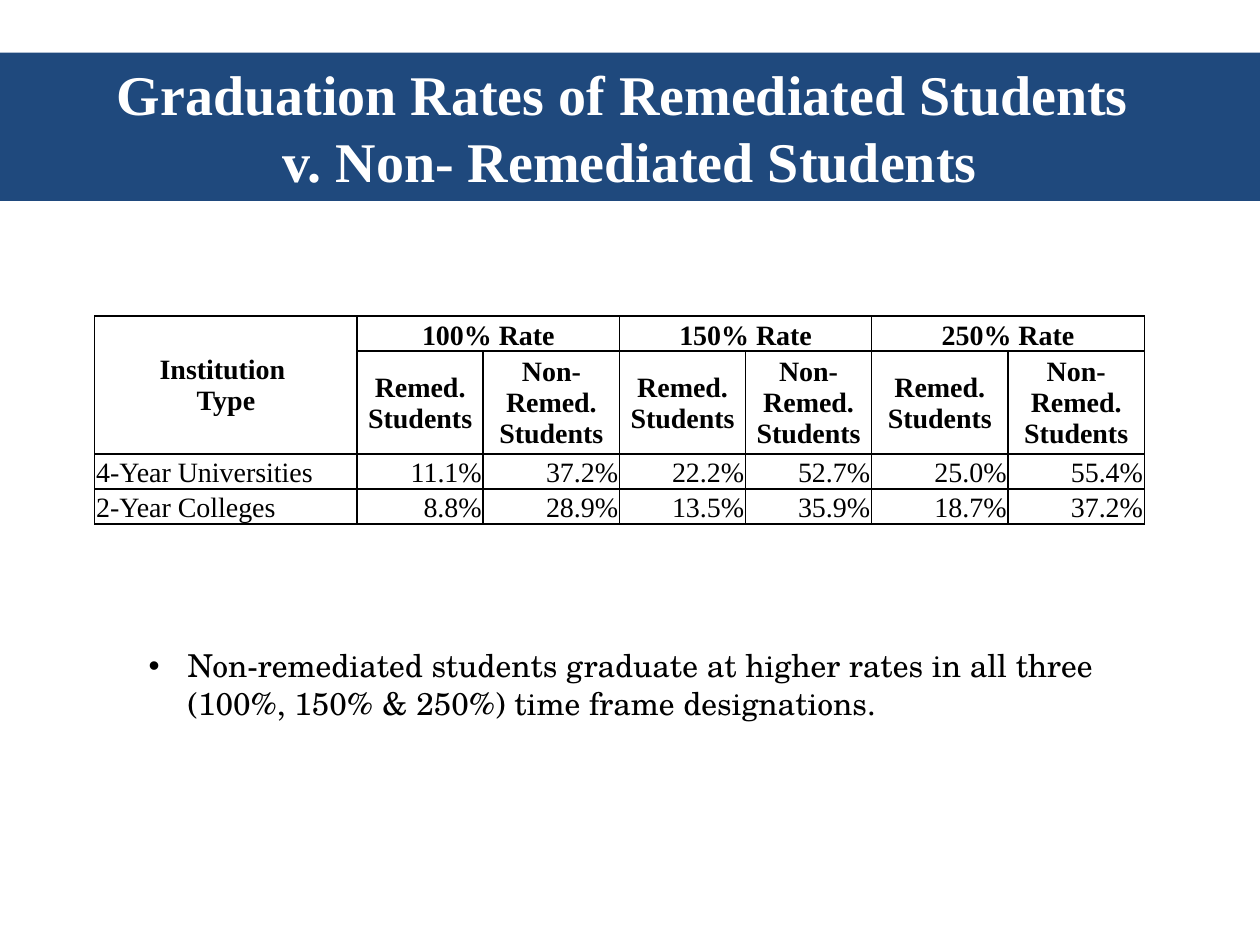
from lxml import etree
from pptx import Presentation
from pptx import util as u
from pptx.dml.color import RGBColor
from pptx.enum import text
from pptx.oxml import ns

COLORS = {"band": "1F497D", "title": "FFFFFF", "ink": "000000"}
SERIF, SCHOLA = "Times New Roman", "TeX Gyre Schola"

RATES = ["100% Rate", "150% Rate", "250% Rate"]
GROUPS = ["Remed. Students", "Non-Remed. Students"]
RESULTS = [
    ["4-Year Universities", "11.1%", "37.2%", "22.2%", "52.7%", "25.0%", "55.4%"],
    ["2-Year Colleges", "8.8%", "28.9%", "13.5%", "35.9%", "18.7%", "37.2%"],
]
COLUMN_WIDTHS = [5.29, 2.54, 2.75, 2.54, 2.54, 2.75, 2.75]
ROW_HEIGHTS = [0.69, 2.07, 0.7, 0.7]


def rgb(name):
    return RGBColor.from_string(COLORS[name])


def write(frame, *lines, size=16, font=SERIF, color="ink", bold=False,
          align=text.PP_ALIGN.LEFT, bullet_indent=None):
    """Fill a text frame with one paragraph per line."""
    frame.word_wrap = True
    for i, line in enumerate(lines):
        paragraph = frame.paragraphs[0] if i == 0 else frame.add_paragraph()
        if bullet_indent:
            add_bullet(paragraph, bullet_indent)
        paragraph.alignment = align
        paragraph.space_before = u.Pt(0)
        run = paragraph.add_run()
        run.text = line
        run.font.name, run.font.size, run.font.bold = font, u.Pt(size), bold
        run.font.color.rgb = rgb(color)


def add_bullet(paragraph, indent):
    properties = paragraph._p.get_or_add_pPr()
    properties.set("marL", str(indent))
    properties.set("indent", str(-indent))
    etree.SubElement(properties, ns.qn("a:buFont"), typeface="Arial")
    etree.SubElement(properties, ns.qn("a:buChar"), char="•")


def place(shape, left, top, width, height):
    shape.left, shape.top = u.Cm(left), u.Cm(top)
    shape.width, shape.height = u.Cm(width), u.Cm(height)


def add_title(slide):
    title = slide.shapes.title
    place(title, 0, 1.06, 25.4, 2.99)
    title.fill.solid()
    title.fill.fore_color.rgb = rgb("band")
    title.text_frame.auto_size = text.MSO_AUTO_SIZE.SHAPE_TO_FIT_TEXT
    write(title.text_frame, "Graduation Rates of Remediated Students ",
          "v. Non- Remediated Students", size=32, color="title", bold=True,
          align=text.PP_ALIGN.CENTER)


def add_finding(slide):
    body = slide.placeholders[1]
    place(body, 2.74, 12.9, 19.69, 1.8)
    body.text_frame.auto_size = text.MSO_AUTO_SIZE.SHAPE_TO_FIT_TEXT
    write(body.text_frame,
          "Non-remediated students graduate at higher rates in all three "
          "(100%, 150% & 250%) time frame designations.",
          size=18, font=SCHOLA, bullet_indent=u.Cm(0.79))


def style_cell(cell):
    """Clear the fill, tighten the margins and rule all four sides."""
    cell.fill.background()
    cell.margin_left = cell.margin_right = cell.margin_top = u.Cm(0.03)
    cell.margin_bottom = 0
    cell.vertical_anchor = text.MSO_ANCHOR.BOTTOM
    properties = cell._tc.get_or_add_tcPr()
    for i, side in enumerate(("lnL", "lnR", "lnT", "lnB")):
        border = etree.Element(ns.qn(f"a:{side}"), w=str(u.Pt(1)))
        fill = etree.SubElement(border, ns.qn("a:solidFill"))
        etree.SubElement(fill, ns.qn("a:srgbClr"), val=COLORS["ink"])
        properties.insert(i, border)


def write_header(cell, *lines, anchor=text.MSO_ANCHOR.MIDDLE):
    cell.vertical_anchor = anchor
    write(cell.text_frame, *lines, bold=True, align=text.PP_ALIGN.CENTER)


def add_rates_table(slide):
    table = slide.shapes.add_table(
        len(ROW_HEIGHTS), len(COLUMN_WIDTHS), u.Cm(1.91), u.Cm(6.37),
        u.Cm(sum(COLUMN_WIDTHS)), u.Cm(sum(ROW_HEIGHTS))).table
    table.first_row = table.horz_banding = False
    for column, width in zip(table.columns, COLUMN_WIDTHS):
        column.width = u.Cm(width)
    for row, height in zip(table.rows, ROW_HEIGHTS):
        row.height = u.Cm(height)
    for cell in table.iter_cells():
        style_cell(cell)

    table.cell(0, 0).merge(table.cell(1, 0))
    write_header(table.cell(0, 0), "Institution ", "Type")
    for i, rate in enumerate(RATES):
        first = 1 + i * len(GROUPS)
        table.cell(0, first).merge(table.cell(0, first + len(GROUPS) - 1))
        write_header(table.cell(0, first), rate, anchor=text.MSO_ANCHOR.BOTTOM)
        for j, group in enumerate(GROUPS):
            write_header(table.cell(1, first + j), group)

    for r, result in enumerate(RESULTS, start=2):
        for c, value in enumerate(result):
            align = text.PP_ALIGN.RIGHT if c else text.PP_ALIGN.LEFT
            write(table.cell(r, c).text_frame, value, align=align)


def main():
    deck = Presentation()
    deck.slide_width, deck.slide_height = u.Cm(25.4), u.Cm(19.05)
    slide = deck.slides.add_slide(deck.slide_layouts[1])
    add_title(slide)
    add_finding(slide)
    add_rates_table(slide)
    deck.save("out.pptx")


if __name__ == "__main__":
    main()
